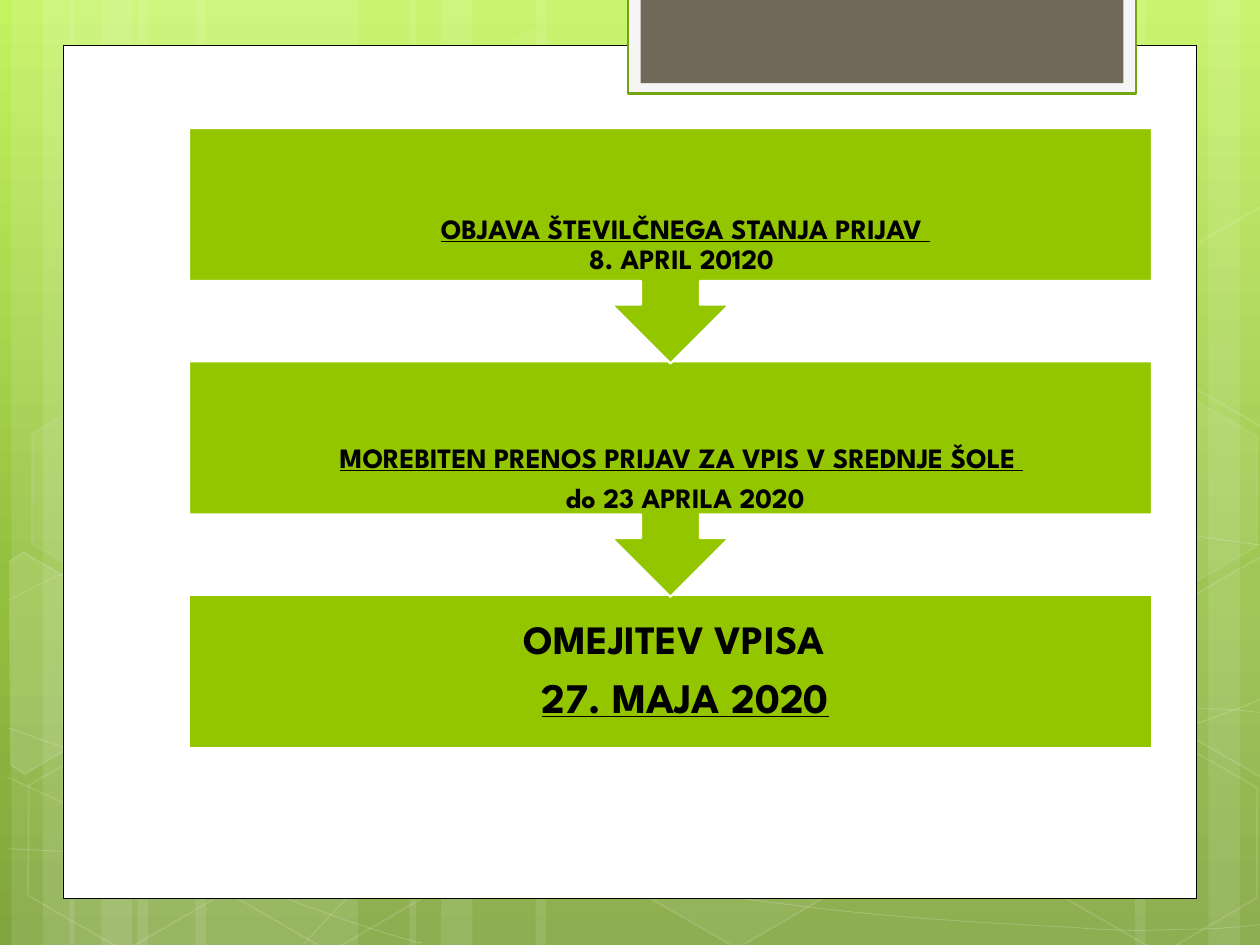
import pptx
import pptx.dml.color
import pptx.enum.shapes
import pptx.enum.text
import pptx.oxml.ns
import pptx.util
import copy
import dataclasses
import lxml.etree
import math
from typing import Any, Optional

Pt = pptx.util.Pt
Kind = pptx.enum.shapes.MSO_SHAPE
qn = pptx.oxml.ns.qn
Point = tuple[float, float]


@dataclasses.dataclass(frozen=True)
class Theme:
    sky: tuple = ((0, "C3F35F"), (0.62, "93BF3F"), (1, "81A53E"))
    white: str = "FFFFFF"
    black: str = "000000"
    green: str = "94C600"
    tab: str = "71685A"
    rim: str = "F5F5F5"
    edge: str = "74A510"
    font: str = "League Spartan"
    small: float = 16
    large: float = 23
    date: float = 24


@dataclasses.dataclass(frozen=True)
class Band:
    base: float
    wide: float
    side: int = 1


@dataclasses.dataclass(frozen=True)
class Hex:
    left: float
    top: float
    fill: int
    line: int


@dataclasses.dataclass(frozen=True)
class Cut:
    mid: Point
    fill: int
    points: tuple[Point, ...]


@dataclasses.dataclass(frozen=True)
class Line:
    text: str
    size: float
    under: bool
    tail: str = ""


@dataclasses.dataclass(frozen=True)
class Step:
    top: float
    high: float
    inset: float
    kind: Any
    lines: tuple[Line, ...]


THEME = Theme()
LEFT, WIDE, TURN = 108, 550.2, 30
BANDS = (Band(6.5, 126), Band(39.6, 126), Band(726.5, 126, -1), Band(234, 222.5))
HEXES = (
    Hex(240.5, 26, 4, 8), Hex(358, 424, 6, 12), Hex(8, 425.5, 0, 12),
    Hex(10, 224.5, 7, 8), Hex(125.5, 426, 0, 12), Hex(542, 326, 10, 12),
    Hex(600.5, 427, 0, 12), Hex(600.5, 226, 7, 8),
)
CUTS = (
    Cut((25.9, 386), 10, ((5.8, 320.4), (13.7, 315.4), (69.1, 347.8), (68.4, 410.4),
                          (14.4, 442.1), (6.5, 437))),
    Cut((709.2, 374.4), 4, ((666.7, 349.2), (721.4, 317.5), (726.5, 321.1), (726.5, 441.4),
                            (721.4, 444.2), (666.7, 412.6))),
    Cut((709.2, 173.5), 0, ((666.7, 149), (721.4, 117.4), (727.2, 121), (726.5, 241.2),
                            (721.4, 244.1), (666.7, 212.4))),
)
CURVES = (
    ((5, 485), (44, 487), (83, 489), (137, 488), (191, 487), (258, 486), (330, 479),
     (402, 472), (504, 458), (570, 444), (636, 430), (703, 409), (725, 397)),
    ((5, 343), (26, 332), (47, 321), (87, 310), (128, 300), (186, 284), (250, 279),
     (314, 274), (392, 273), (471, 279), (550, 284), (682, 307), (725, 312)),
    ((4, 444), (91, 484), (178, 523), (241, 539)),
    ((5, 416), (27, 424), (50, 432), (92, 444), (134, 454), (197, 472), (257, 485),
     (317, 497), (392, 510), (452, 517), (512, 525), (576, 528), (614, 530),
     (652, 533), (662, 531), (680, 531), (699, 531), (712, 529), (725, 528)),
    ((174, 539), (187, 525), (200, 510), (217, 498), (235, 484), (259, 470), (279, 460),
     (300, 450), (312, 446), (338, 438), (364, 431), (413, 421), (438, 416),
     (464, 411), (467, 411), (490, 410), (512, 408), (547, 405), (572, 405),
     (597, 404), (638, 405), (638, 405), (654, 405), (670, 405), (686, 405),
     (699, 405), (711, 406), (718, 407), (724, 407), (722, 407), (724, 408)),
)
STEPS = (
    Step(339.8, 88, 13, Kind.RECTANGLE, (
        Line("OMEJITEV VPISA  ", THEME.large, False),
        Line("27. MAJA 2020", THEME.date, True))),
    Step(206.5, 134.5, 8.5, Kind.UP_ARROW_CALLOUT, (
        Line("MOREBITEN PRENOS PRIJAV ZA VPIS V SREDNJE ŠOLE ", THEME.small, True, " "),
        Line("do 23 APRILA 2020", THEME.small, False))),
    Step(73.2, 134.5, 8.5, Kind.UP_ARROW_CALLOUT, (
        Line("OBJAVA ŠTEVILČNEGA STANJA PRIJAV \v8. APRIL 20120 ", THEME.small, True),)),
)


def tint(fill: Any, color: str, alpha: int = 100) -> None:
    if not alpha:
        fill.background()
        return
    fill.solid()
    fill.fore_color.rgb = pptx.dml.color.RGBColor.from_string(color)
    if alpha < 100:
        node = fill._xPr.find(qn("a:solidFill"))[0]
        lxml.etree.SubElement(node, qn("a:alpha")).set("val", str(alpha * 1000))


def style(shape: Any, color: str, alpha: int = 100, line: Optional[str] = None,
          width: float = 1, haze: int = 100) -> None:
    shape.shadow.inherit = False
    tint(shape.fill, color, alpha)
    if line is None:
        shape.line.fill.background()
        return
    shape.line.width = Pt(width)
    tint(shape.line.fill, line, haze)


def block(slide: Any, kind: Any, left: float, top: float, wide: float, high: float) -> Any:
    return slide.shapes.add_shape(kind, Pt(left), Pt(top), Pt(wide), Pt(high))


def trace(slide: Any, points: tuple[Point, ...], close: bool) -> Any:
    fine = [(100 * x, 100 * y) for x, y in points]
    pen = slide.shapes.build_freeform(*fine[0], scale=Pt(0.01))
    pen.add_line_segments(fine[1:], close=close)
    return pen.convert_to_shape()


def draw_curve(slide: Any, knots: tuple[Point, ...]) -> None:
    shape = trace(slide, knots, False)
    legs = list(shape._element.iter(qn("a:lnTo")))
    track = legs[0].getparent()
    for start in range(0, len(legs), 3):
        curve = lxml.etree.SubElement(track, qn("a:cubicBezTo"))
        for leg in legs[start:start + 3]:
            curve.append(leg[0])
            track.remove(leg)
    style(shape, THEME.white, 0, THEME.white, 0.5, 20)


def draw_cut(slide: Any, cut: Cut) -> None:
    cos, sin = math.cos(math.radians(TURN)), math.sin(math.radians(TURN))
    mid_x, mid_y = cut.mid
    flat = tuple((mid_x + (x - mid_x) * cos + (y - mid_y) * sin,
                  mid_y - (x - mid_x) * sin + (y - mid_y) * cos) for x, y in cut.points)
    shape = trace(slide, flat, True)
    shape.rotation = TURN
    style(shape, THEME.white, cut.fill, THEME.white, 1, 12)


def paint(slide: Any) -> None:
    fill = slide.background.fill
    fill.gradient()
    fill.gradient_angle = 270
    stops = next(slide._element.iter(qn("a:gsLst")))
    stops.append(copy.deepcopy(stops[-1]))
    for stop, (place, color) in zip(fill.gradient_stops, THEME.sky):
        stop.position = place
        stop.color.rgb = pptx.dml.color.RGBColor.from_string(color)


def draw_band(slide: Any, band: Band) -> None:
    for shift, wide in ((72, band.wide), (0, 36), (18, 60)):
        left = band.base + shift if band.side > 0 else band.base - shift - wide
        style(block(slide, Kind.RECTANGLE, left, 0, wide, 540), THEME.white, 10)


def draw_hex(slide: Any, cell: Hex) -> None:
    shape = block(slide, Kind.HEXAGON, cell.left, cell.top, 126, 109.5)
    shape.adjustments[0] = 0.285
    shape.rotation = TURN
    style(shape, THEME.white, cell.fill, THEME.white, 1, cell.line)


def draw_step(slide: Any, step: Step) -> None:
    shape = block(slide, step.kind, LEFT, step.top, WIDE, step.high)
    if step.kind == Kind.UP_ARROW_CALLOUT:
        shape.rotation = 180
    style(shape, THEME.green, line=THEME.white, width=1.25)
    box = slide.shapes.add_textbox(Pt(LEFT), Pt(step.top), Pt(WIDE), Pt(step.high))
    frame = box.text_frame
    frame.word_wrap = True
    frame.vertical_anchor = pptx.enum.text.MSO_ANCHOR.MIDDLE
    frame.margin_left = frame.margin_right = Pt(step.inset)
    frame.margin_top = frame.margin_bottom = Pt(step.inset)
    frame.text = "\n".join(line.text for line in step.lines)
    for para, line in zip(frame.paragraphs, step.lines):
        para.alignment = pptx.enum.text.PP_ALIGN.CENTER
        para.line_spacing = 0.9
        para.space_after = Pt(line.size * 0.35)
        para._p.get_or_add_pPr().set("marL", str(Pt(17)))
        if line.tail:
            para.add_run().text = line.tail
        for gap in para._p.findall(qn("a:br")):
            lxml.etree.SubElement(gap, qn("a:rPr")).set("sz", str(int(line.size * 100)))
        for index, run in enumerate(para.runs):
            run.font.name = THEME.font
            run.font.size = Pt(line.size)
            run.font.bold = True
            run.font.underline = line.under and index == 0
            run.font.color.rgb = pptx.dml.color.RGBColor.from_string(THEME.black)


def main() -> None:
    deck = pptx.Presentation()
    deck.slide_width, deck.slide_height = Pt(720), Pt(540)
    slide = deck.slides.add_slide(deck.slide_layouts[6])
    paint(slide)
    for draw, items in ((draw_band, BANDS), (draw_curve, CURVES), (draw_hex, HEXES), (draw_cut, CUTS)):
        for item in items:
            draw(slide, item)
    style(block(slide, Kind.RECTANGLE, 36, 26, 648, 487.5), THEME.white, line=THEME.black, width=0.5)
    style(block(slide, Kind.RECTANGLE, 359, -1.5, 290, 55), THEME.rim, line=THEME.edge, width=1.25)
    style(block(slide, Kind.RECTANGLE, 366, -1.5, 276, 49), THEME.tab)
    for step in STEPS:
        draw_step(slide, step)
    deck.save("out.pptx")


if __name__ == "__main__":
    main()
